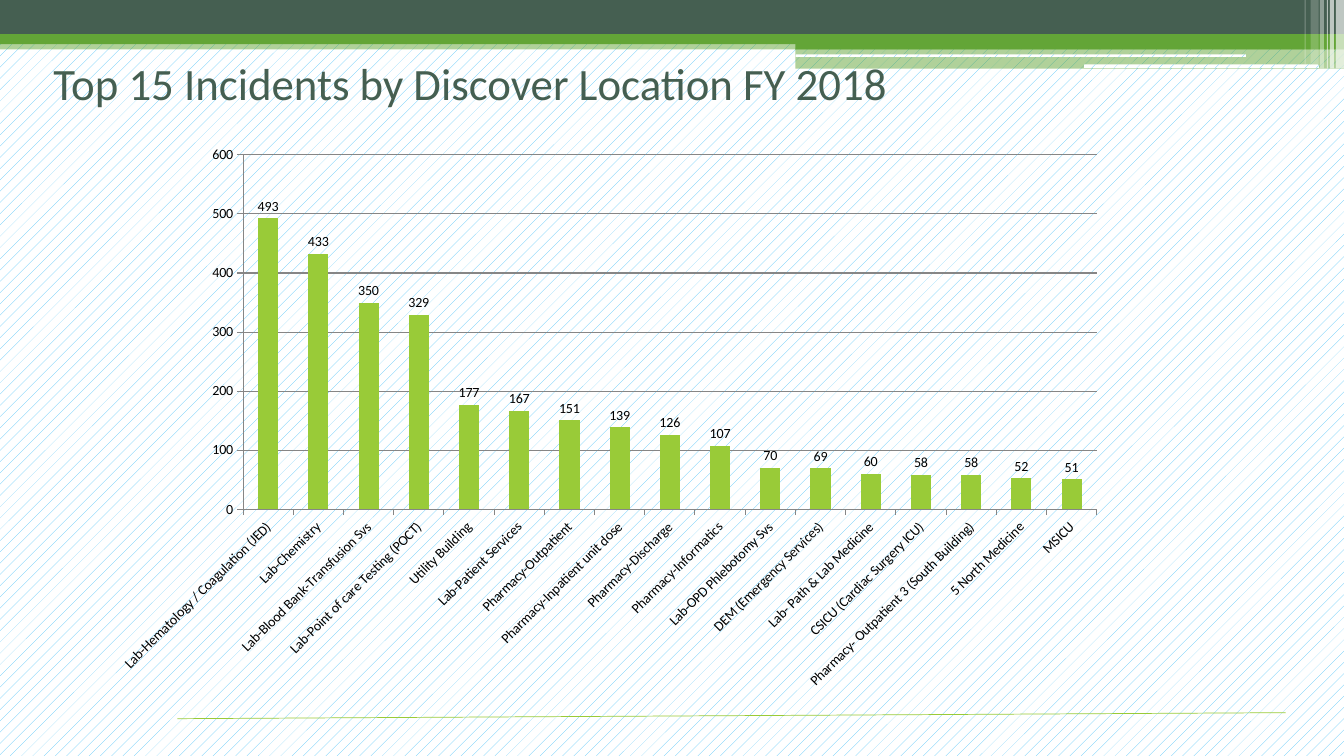
from lxml import etree
from pptx import Presentation, util as u
from pptx.chart.data import CategoryChartData
from pptx.dml.color import RGBColor
from pptx.enum import chart as ch, dml, shapes, text
from pptx.oxml import ns

HUES = {"slate": "455F51", "green": "63A537", "lime": "99CB38", "sky": "51C3F9",
        "white": "FFFFFF", "black": "000000", "grey": "868686"}
FONT = "Calibri"
RECT = shapes.MSO_SHAPE.RECTANGLE
ROUND = shapes.MSO_SHAPE.ROUNDED_RECTANGLE

COUNTS = {
    "Lab-Hematology / Coagulation (JED)": 493,
    "Lab-Chemistry": 433,
    "Lab-Blood Bank-Transfusion Svs": 350,
    "Lab-Point of care Testing (POCT)": 329,
    "Utility Building": 177,
    "Lab-Patient Services": 167,
    "Pharmacy-Outpatient": 151,
    "Pharmacy-Inpatient unit dose": 139,
    "Pharmacy-Discharge": 126,
    "Pharmacy-Informatics": 107,
    "Lab-OPD Phlebotomy Svs": 70,
    "DEM (Emergency Services)": 69,
    "Lab- Path & Lab Medicine": 60,
    "CSICU (Cardiac Surgery ICU)": 58,
    "Pharmacy- Outpatient 3 (South Building)": 58,
    "5 North Medicine": 52,
    "MSICU": 51,
}


def hue(name):
    return RGBColor.from_string(HUES[name])


def add(node, tag, **attrs):
    return etree.SubElement(node, ns.qn(tag), attrs)


class Deck:
    """Draws on one slide; every length is a percentage of the slide's size."""

    def __init__(self):
        self.prs = Presentation()
        self.prs.slide_width = u.Inches(13.33)
        self.prs.slide_height = u.Inches(7.5)
        self.slide = self.prs.slides.add_slide(self.prs.slide_layouts[6])
        self.hatch(self.slide.background.fill)

    def place(self, *pos):
        sizes = (self.prs.slide_width, self.prs.slide_height) * 2
        return [round(size * part / 100) for size, part in zip(sizes, pos)]

    def hatch(self, fill):
        fill.patterned()
        fill.pattern = dml.MSO_PATTERN.PERCENT_10
        fill.fore_color.rgb = hue("sky")
        fill.back_color.rgb = hue("white")

    def block(self, pos, color=None, alpha=100, kind=RECT):
        """Add a bar without outline; without a colour it takes the hatch."""
        bar = self.slide.shapes.add_shape(kind, *self.place(*pos))
        bar.shadow.inherit = False
        bar.line.fill.background()
        if color is None:
            self.hatch(bar.fill)
            return
        bar.fill.solid()
        bar.fill.fore_color.rgb = hue(color)
        if alpha < 100:
            tone = bar.fill._xPr.find(".//" + ns.qn("a:srgbClr"))
            add(tone, "a:alpha", val=str(alpha * 1000))

    def rule(self, ends, color, width):
        line = self.slide.shapes.add_connector(
            shapes.MSO_CONNECTOR.STRAIGHT, *self.place(*ends))
        line.line.color.rgb = hue(color)
        line.line.width = u.Pt(width)
        add(line._element.spPr, "a:effectLst")

    def title(self, pos, words):
        frame = self.slide.shapes.add_textbox(*self.place(*pos)).text_frame
        frame.word_wrap = True
        frame.vertical_anchor = text.MSO_ANCHOR.TOP
        frame.text = words
        font = frame.paragraphs[0].runs[0].font
        font.name, font.size = FONT, u.Pt(32)
        font.color.rgb = hue("slate")

    def columns(self, pos, counts, area):
        """Add a column chart whose inner plot takes the given share of it."""
        data = CategoryChartData()
        data.categories = list(counts)
        data.add_series("Series 1", list(counts.values()))
        chart = self.slide.shapes.add_chart(
            ch.XL_CHART_TYPE.COLUMN_CLUSTERED, *self.place(*pos), data).chart
        chart.has_legend = chart.has_title = False
        chart.font.name, chart.font.size = FONT, u.Pt(10)
        chart.font.color.rgb = hue("black")

        plot = chart.plots[0]
        plot.gap_width = 150
        plot.vary_by_categories = False
        fill = plot.series[0].format.fill
        fill.solid()
        fill.fore_color.rgb = hue("lime")
        plot.has_data_labels = True
        plot.data_labels.show_value = True
        plot.data_labels.position = ch.XL_LABEL_POSITION.OUTSIDE_END

        cats, vals = chart.category_axis, chart.value_axis
        vals.minimum_scale, vals.maximum_scale, vals.major_unit = 0, 600, 100
        vals.has_major_gridlines = True
        for part in (cats, vals, vals.major_gridlines):
            part.format.line.color.rgb = hue("grey")
            part.format.line.width = u.Pt(0.75)
        for axis in (cats, vals):
            axis.major_tick_mark = ch.XL_TICK_MARK.OUTSIDE
            axis.tick_labels.font.size = u.Pt(10)
        turn = cats._element.find(ns.qn("c:txPr")).find(ns.qn("a:bodyPr"))
        turn.set("rot", "-2700000")
        self.inset(chart, area)

    def inset(self, chart, area):
        plot = chart._chartSpace.find(".//" + ns.qn("c:plotArea"))
        for old in plot.findall(ns.qn("c:layout")):
            plot.remove(old)
        layout = add(plot, "c:layout")
        plot.insert(0, layout)
        manual = add(layout, "c:manualLayout")
        add(manual, "c:layoutTarget", val="inner")
        for tag in ("xMode", "yMode"):
            add(manual, "c:" + tag, val="edge")
        for tag, part in zip("xywh", area):
            add(manual, "c:" + tag, val=str(part))


def main():
    deck = Deck()
    deck.block((0, 5.33, 100, 1.2), "green", 50)
    deck.block((0, 0, 100, 4.53), "slate")
    deck.block((0, 4.53, 100, 1.33), "green")
    deck.block((59.19, 5.2, 40.81, 1.33), "green")
    deck.block((59.19, 6.4, 40.81, 2.67), "green", 50)
    deck.block((59.19, 7.2, 33.53, 0.4), kind=ROUND)
    deck.block((80.65, 8.53, 17.48, 0.53), kind=ROUND)

    stripes = [(99.4, 0.6, 9.07, 65), (98.95, 0.3, 9.07, 65),
               (98.72, 0.08, 9.07, 60), (98.2, 0.3, 9.07, 40),
               (97.52, 0.6, 8.53, 20), (97.07, 0.08, 8.53, 30)]
    for left, width, height, alpha in stripes:
        deck.block((left, 0, width, height), "white", alpha)

    deck.rule((13.2, 95.07, 95.65, 94.27), "lime", 0.5)
    deck.title((3.23, 6.67, 85.3, 16.8),
               "Top 15 Incidents by Discover Location FY 2018")
    deck.columns((7.5, 18.27, 75.62, 74.4), COUNTS, (0.14, 0.03, 0.84, 0.63))
    deck.prs.save("out.pptx")


if __name__ == "__main__":
    main()
